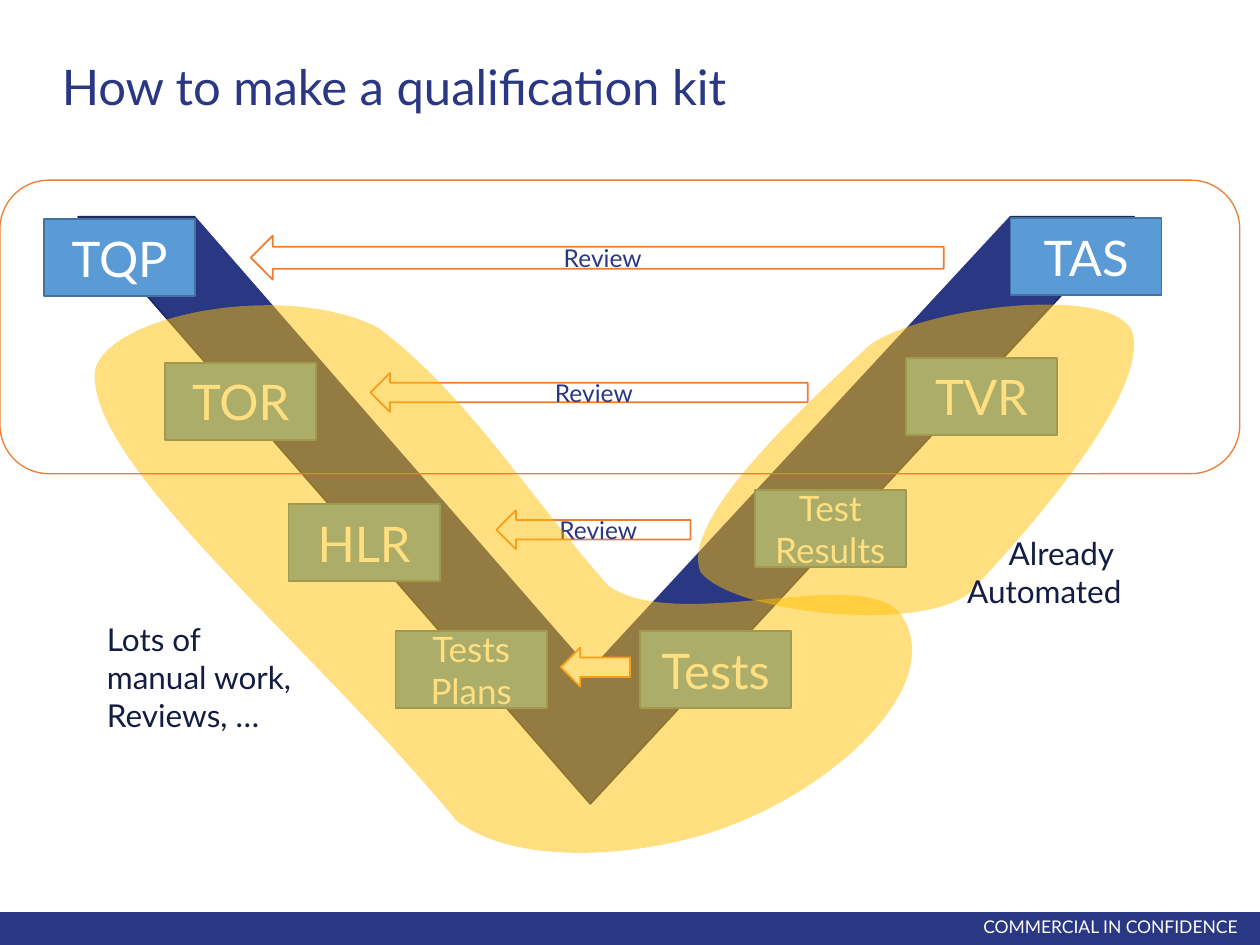
from lxml.etree import SubElement
from pptx import Presentation
from pptx.dml.color import RGBColor
from pptx.enum.shapes import MSO_SHAPE
from pptx.enum.text import MSO_ANCHOR, PP_ALIGN
from pptx.oxml.ns import qn
from pptx.util import Inches, Pt

COLUMNS, ROWS = 10, 7.5
CELL = Inches(1)
FONT = "Lato"
NAVY, DARK_NAVY, INK = "2A3783", "1F2961", "151C42"
BLUE, DARK_BLUE = "5B9BD5", "43739E"
WHITE, ORANGE, AMBER = "FFFFFF", "ED7D31", "FFC000"
STAGE_SIZE = (1.2, 0.61)
STAGES = [
    ("TQP", 0.35, 1.74, 28), ("TOR", 1.31, 2.88, 28),
    ("HLR", 2.29, 4, 28), ("Tests Plans", 3.14, 5.01, 20),
    ("Test Results", 5.99, 3.89, 20), ("TVR", 7.19, 2.84, 28),
    ("Tests", 5.08, 5.01, 28), ("TAS", 8.02, 1.73, 28),
]
REVIEWS = [
    ("Review", (1.99, 1.87, 5.5, 0.35)), ("Review", (2.94, 2.96, 3.47, 0.31)),
    ("Review", (3.94, 4.05, 1.54, 0.31)), ("", (4.45, 5.14, 0.55, 0.31)),
]
AUTOMATED_CURVE = [
    (3.46, 0.28), (3.45, -0.2), (1.75, 0.01), (1.35, 0.33),
    (0.95, 0.71), (-0.16, 1.69), (0.02, 2.12),
    (0.27, 2.45), (1.78, 2.61), (2.16, 2.28),
    (2.43, 1.99), (3.5, 0.85), (3.46, 0.28),
]
MANUAL_CURVE = [
    (0, 0.55), (0.03, 0.1), (1.48, -0.21), (2.25, 0.18),
    (2.97, 0.72), (3.47, 1.55), (4.08, 2.23),
    (4.64, 2.62), (6.12, 2.04), (6.41, 2.47),
    (6.79, 3.06), (5.73, 3.98), (4.74, 4.23),
    (4.19, 4.38), (3.32, 4.44), (2.87, 4.09),
    (1.69, 2.66), (-0.01, 1.31), (0, 0.55),
]


def color(hex_string):
    """Turn a hex string into a colour."""
    return RGBColor.from_string(hex_string)


def place(box):
    """Turn a box in grid columns and rows into lengths."""
    return [round(CELL * length) for length in box]


def paint(shape, fill=None, line=None, width=1):
    """Set fill and outline, and remove the shadow."""
    shape.shadow.inherit = False
    if fill:
        shape.fill.solid()
        shape.fill.fore_color.rgb = color(fill)
    else:
        shape.fill.background()
    if line:
        shape.line.color.rgb = color(line)
        shape.line.width = Pt(width)
    else:
        shape.line.fill.background()


def write(shape, lines, size, ink, align=PP_ALIGN.CENTER, anchor=MSO_ANCHOR.MIDDLE):
    """Write one paragraph for each line."""
    frame = shape.text_frame
    frame.word_wrap = True
    frame.vertical_anchor = anchor
    frame.text = "\n".join(lines)
    for paragraph in frame.paragraphs:
        paragraph.alignment = align
        paragraph.font.name = FONT
        paragraph.font.size = Pt(size)
        paragraph.font.color.rgb = color(ink)


def add_panel(shapes, kind, box, fill=None, line=None, width=1):
    """Add a painted preset shape."""
    panel = shapes.add_shape(kind, *place(box))
    paint(panel, fill, line, width)
    return panel


def add_footer(slide, box):
    """Draw the bottom band and its confidentiality mark."""
    left, top, width, height = box
    add_panel(slide.shapes, MSO_SHAPE.RECTANGLE, box, NAVY)
    mark = slide.shapes.add_textbox(*place((left + 6.45, top - 0.02, width - 6.53, height)))
    write(mark, ["COMMERCIAL IN CONFIDENCE"], 10, WHITE, PP_ALIGN.RIGHT)


def add_title(slide, box):
    """Place and format the title in front of the shapes drawn so far."""
    title = slide.shapes.title
    title.left, title.top, title.width, title.height = place(box)
    write(title, ["How to make a qualification kit"], 28, NAVY, PP_ALIGN.LEFT, MSO_ANCHOR.TOP)
    slide.shapes._spTree.append(title._element)


def add_v_model(slide, box, thickness):
    """Draw the V as a dark triangle partly covered by a white one."""
    left, top, width, height = box
    v_shapes = slide.shapes.add_group_shape().shapes
    for shift, fill, line in ((0, NAVY, DARK_NAVY), (-thickness, WHITE, None)):
        wedge = add_panel(v_shapes, MSO_SHAPE.ISOSCELES_TRIANGLE,
                          (left, top + shift, width, height), fill, line)
        wedge.adjustments[0] = 0.515
        wedge.rotation = 180


def add_stage(slide, box, label, size):
    """Draw one document box of the V."""
    stage = add_panel(slide.shapes, MSO_SHAPE.RECTANGLE, box, BLUE, DARK_BLUE)
    write(stage, [label], size, WHITE)


def add_review(slide, box, label):
    """Draw one arrow across the V."""
    review = add_panel(slide.shapes, MSO_SHAPE.LEFT_ARROW, box, WHITE, ORANGE)
    if label:
        write(review, [label], 14, NAVY)


def add_curve(slide, box, curve):
    """Add a closed outline of joined cubic curves that fills the box."""
    left, top, width, height = place(box)
    right, bottom = left + width, top + height
    builder = slide.shapes.build_freeform(left, top)
    builder.add_line_segments([(right, top), (right, bottom), (left, bottom)])
    outline = builder.convert_to_shape()
    track = next(outline._element.iter(qn("a:path")))
    for segment in list(track):
        track.remove(segment)
    pieces = [("a:moveTo", curve[:1])]
    pieces += [("a:cubicBezTo", curve[i:i + 3]) for i in range(1, len(curve), 3)]
    for tag, points in pieces:
        segment = SubElement(track, qn(tag))
        for x, y in map(place, points):
            SubElement(segment, qn("a:pt"), x=str(x), y=str(y))
    SubElement(track, qn("a:close"))
    return outline


def add_zone(slide, box, curve, lines, align, bottom_margin=0.05):
    """Draw a translucent zone with its caption."""
    zone = add_curve(slide, box, curve)
    paint(zone, AMBER)
    tint = zone.fill._xPr.find(qn("a:solidFill"))[0]
    SubElement(tint, qn("a:alpha"), val="50000")
    write(zone, lines, 18, INK, align, MSO_ANCHOR.BOTTOM)
    zone.text_frame.margin_bottom = round(CELL * bottom_margin)


def main():
    """Build and save the slide."""
    deck = Presentation()
    deck.slide_width, deck.slide_height = place((COLUMNS, ROWS))
    slide = deck.slides.add_slide(deck.slide_layouts[5])
    add_footer(slide, (0, 7.24, COLUMNS, 0.26))
    add_v_model(slide, (0.62, 1.72, 8.38, 4.66), 1.07)
    add_title(slide, (0.39, 0.4, 9.11, 0.79))
    for label, left, top, size in STAGES:
        add_stage(slide, (left, top, *STAGE_SIZE), label, size)
    for label, box in REVIEWS:
        add_review(slide, box, label)
    add_zone(slide, (5.54, 2.42, 3.46, 2.47), AUTOMATED_CURVE,
             ["Already ", "Automated"], PP_ALIGN.RIGHT)
    add_zone(slide, (0.75, 2.42, 6.49, 4.35), MANUAL_CURVE,
             ["Lots of", "manual work,", "Reviews, …"], PP_ALIGN.LEFT, 0.95)
    add_panel(slide.shapes, MSO_SHAPE.ROUNDED_RECTANGLE, (0, 1.43, 9.84, 2.33),
              line=ORANGE, width=0.75)
    deck.save("out.pptx")


if __name__ == "__main__":
    main()
